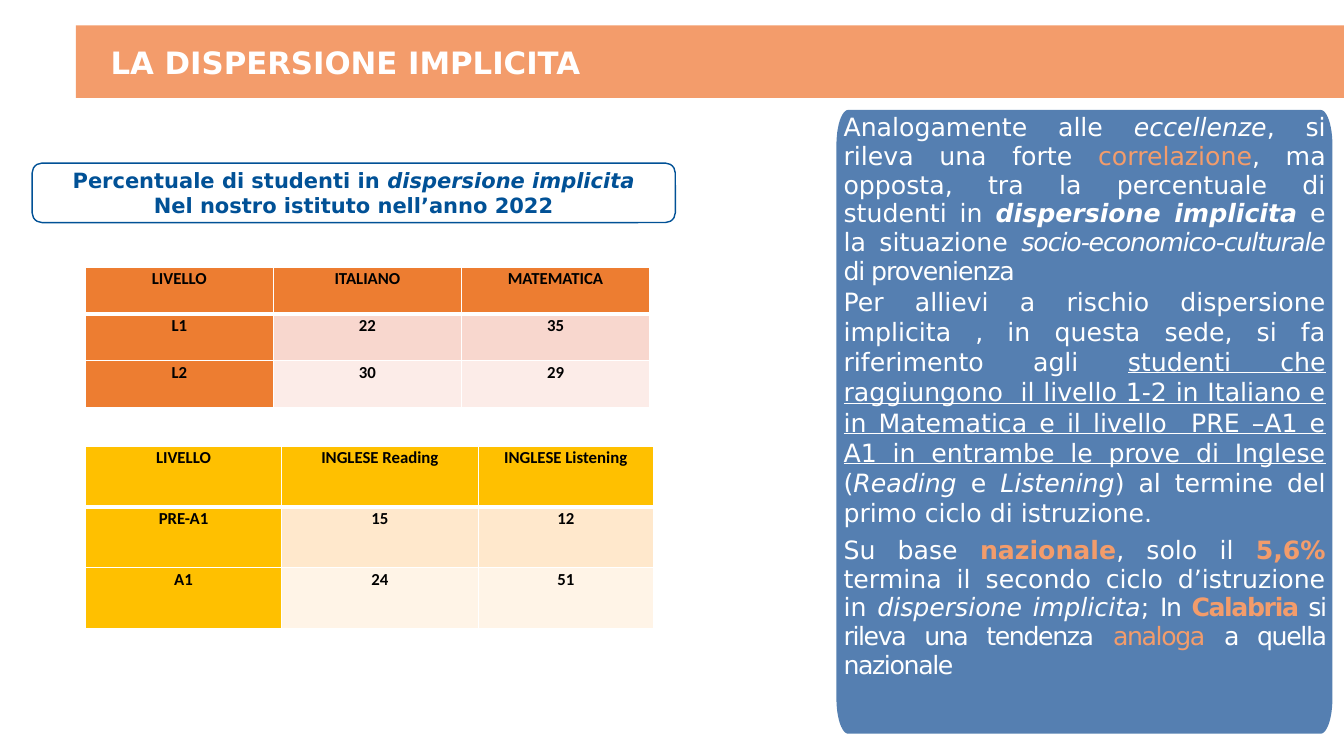
"""Build the slide on implicit school dropout, with two tables of levels."""
from math import cos, pi, sin

from lxml import etree
from pptx import Presentation
from pptx import util as u
from pptx.dml.color import RGBColor
from pptx.enum import shapes, text
from pptx.oxml import ns

WHITE, BLACK, BLUE, ORANGE = "FFFFFF", "000000", "015196", "F39C6B"
CENTER, JUSTIFY = text.PP_ALIGN.CENTER, text.PP_ALIGN.JUSTIFY


def rgb(value):
    return RGBColor.from_string(value)


def add_run(paragraph, words, font="DejaVu Sans", size=18, color=WHITE, bold=False,
            italic=False, underline=False, spacing=0):
    run = paragraph.add_run()
    run.text = words
    run.font.name, run.font.size = font, u.Pt(size)
    run.font.bold, run.font.italic = bold, italic
    run.font.underline = underline
    run.font.color.rgb = rgb(color)
    if spacing:
        run._r.get_or_add_rPr().set("spc", str(round(spacing * 100)))


class Builder:
    def __init__(self, slide):
        self.slide = slide

    def paint(self, shape, fill, line=None, alpha=None):
        shape.shadow.inherit = False
        shape.fill.solid()
        shape.fill.fore_color.rgb = rgb(fill)
        if alpha:
            color = shape._element.spPr.find(".//" + ns.qn("a:srgbClr"))
            etree.SubElement(color, ns.qn("a:alpha"), val=str(alpha * 1000))
        if line:
            shape.line.color.rgb = rgb(line)
            shape.line.width = u.Pt(1)
        else:
            shape.line.fill.background()

    def box(self, kind, place, fill, line=None):
        shape = self.slide.shapes.add_shape(kind, *map(u.Cm, place))
        self.paint(shape, fill, line)
        return shape

    def panel(self, left, top, width, height, radius_x, radius_y, fill, alpha):
        corners = [(left + width - radius_x, top + height - radius_y),
                   (left + radius_x, top + height - radius_y),
                   (left + radius_x, top + radius_y),
                   (left + width - radius_x, top + radius_y)]
        points = []
        for quarter, (x, y) in enumerate(corners):
            for step in range(13):
                angle = (quarter + step / 12) * pi / 2
                points.append((u.Cm(x + radius_x * cos(angle)),
                               u.Cm(y + radius_y * sin(angle))))
        outline = self.slide.shapes.build_freeform(*points[0])
        outline.add_line_segments(points[1:], close=True)
        self.paint(outline.convert_to_shape(), fill, alpha=alpha)

    def textbox(self, place):
        return self.slide.shapes.add_textbox(*map(u.Cm, place))

    def fill_text(self, holder, paragraphs, align=None, spacings=(), befores=(), **style):
        frame = holder.text_frame
        frame.word_wrap = True
        for index, runs in enumerate(paragraphs):
            paragraph = frame.paragraphs[0] if index == 0 else frame.add_paragraph()
            paragraph.alignment = align
            if spacings:
                paragraph.line_spacing = spacings[index]
            if befores:
                paragraph.space_before = u.Pt(befores[index])
            for words, extra in runs:
                add_run(paragraph, words, **{**style, **extra})

    def border(self, cell, widths):
        properties = cell._tc.get_or_add_tcPr()
        for index, (side, width) in enumerate(zip("LRTB", widths)):
            line = etree.Element(ns.qn("a:ln" + side), w=str(u.Pt(width)))
            fill = etree.SubElement(line, ns.qn("a:solidFill"))
            etree.SubElement(fill, ns.qn("a:srgbClr"), val=WHITE)
            properties.insert(index, line)

    def table(self, left, top, columns, row_height, rows, head_fill, body_fills):
        place = left, top, sum(columns), row_height * len(rows)
        frame = self.slide.shapes.add_table(len(rows), len(columns), *map(u.Cm, place))
        table = frame.table
        for column, width in zip(table.columns, columns):
            column.width = u.Cm(width)
        for i, row in enumerate(rows):
            table.rows[i].height = u.Cm(row_height)
            for j, words in enumerate(row):
                cell = table.cell(i, j)
                cell.margin_left = cell.margin_right = u.Cm(0.18)
                cell.margin_top = cell.margin_bottom = 0
                cell.fill.solid()
                fill = body_fills[i - 1] if i and j else head_fill
                cell.fill.fore_color.rgb = rgb(fill)
                self.border(cell, (1, 1, 3 if i == 1 else 1, 3 if i == 0 else 1))
                paragraph = cell.text_frame.paragraphs[0]
                paragraph.alignment = CENTER
                paragraph.line_spacing = 1.07
                paragraph.space_after = u.Pt(8)
                add_run(paragraph, words, font="Calibri", size=12, color=BLACK, bold=True)


def main():
    presentation = Presentation()
    presentation.slide_width, presentation.slide_height = u.Cm(33.87), u.Cm(19.05)
    builder = Builder(presentation.slides.add_slide(presentation.slide_layouts[6]))
    plain, italic, orange = {}, {"italic": True}, {"color": ORANGE}
    strong = {"color": ORANGE, "bold": True}
    tight = {"spacing": -1}

    builder.box(shapes.MSO_SHAPE.RECTANGLE, (1.91, 0.64, 31.96, 1.83), ORANGE)
    builder.panel(21.08, 2.77, 12.5, 15.72, 0.3, 0.89, "0D4A91", 70)
    title = builder.textbox((2.54, 0.97, 31.33, 1.19))
    builder.fill_text(title, [[("LA DISPERSIONE IMPLICITA", plain)]], size=22, bold=True)

    caption = builder.box(shapes.MSO_SHAPE.ROUNDED_RECTANGLE,
                          (0.81, 4.11, 16.21, 1.5), WHITE, BLUE)
    caption.text_frame.vertical_anchor = text.MSO_ANCHOR.MIDDLE
    builder.fill_text(caption, [
        [("Percentuale di studenti in ", plain), ("dispersione implicita", italic)],
        [("Nel nostro istituto nell’anno 2022", plain)],
    ], align=CENTER, size=15, color=BLUE, bold=True)

    commentary = builder.textbox((21.01, 2.74, 12.65, 14.66))
    builder.fill_text(commentary, [
        [("Analogamente alle ", plain), ("eccellenze", italic),
         (", si rileva una forte ", plain), ("correlazione", orange),
         (", ma opposta, tra la percentuale di studenti in ", plain),
         ("dispersione implicita", {"bold": True, "italic": True}),
         (" e la situazione ", plain),
         ("socio-economico-culturale", {"italic": True, "spacing": -0.8}),
         (" di provenienza", {"spacing": -0.8})],
        [("Per allievi a rischio dispersione implicita , in questa sede, "
          "si fa riferimento agli ", plain),
         ("studenti che raggiungono  il livello 1-2 in Italiano e in Matematica "
          "e il livello  PRE –A1 e A1 in entrambe le prove di Inglese ",
          {"underline": True}),
         ("(", plain), ("Reading", italic), (" e ", plain), ("Listening", italic),
         (") al termine del primo ciclo di istruzione.", plain)],
        [("Su base ", plain), ("nazionale", strong), (", solo il ", plain),
         ("5,6%", strong), (" termina il secondo ciclo d’istruzione in ", plain),
         ("dispersione implicita", italic), ("; ", plain), ("In ", tight),
         ("Calabria", {**strong, **tight}), (" si rileva una tendenza ", tight),
         ("analoga", {**orange, **tight}), (" a quella nazionale", tight)],
    ], align=JUSTIFY, spacings=(0.95, 1, 0.95), befores=(0, 0, 6))

    builder.table(2.15, 6.73, (4.74, 4.74, 4.74), 1.18, [
        ("LIVELLO", "ITALIANO", "MATEMATICA"),
        ("L1", "22", "35"),
        ("L2", "30", "29"),
    ], "ED7D31", ("F8D7CE", "FCECE8"))
    builder.table(2.15, 11.25, (4.95, 4.95, 4.42), 1.53, [
        ("LIVELLO", "INGLESE Reading", "INGLESE Listening"),
        ("PRE-A1", "15", "12"),
        ("A1", "24", "51"),
    ], "FFC000", ("FFE8CC", "FFF4E7"))
    presentation.save("out.pptx")


if __name__ == "__main__":
    main()
